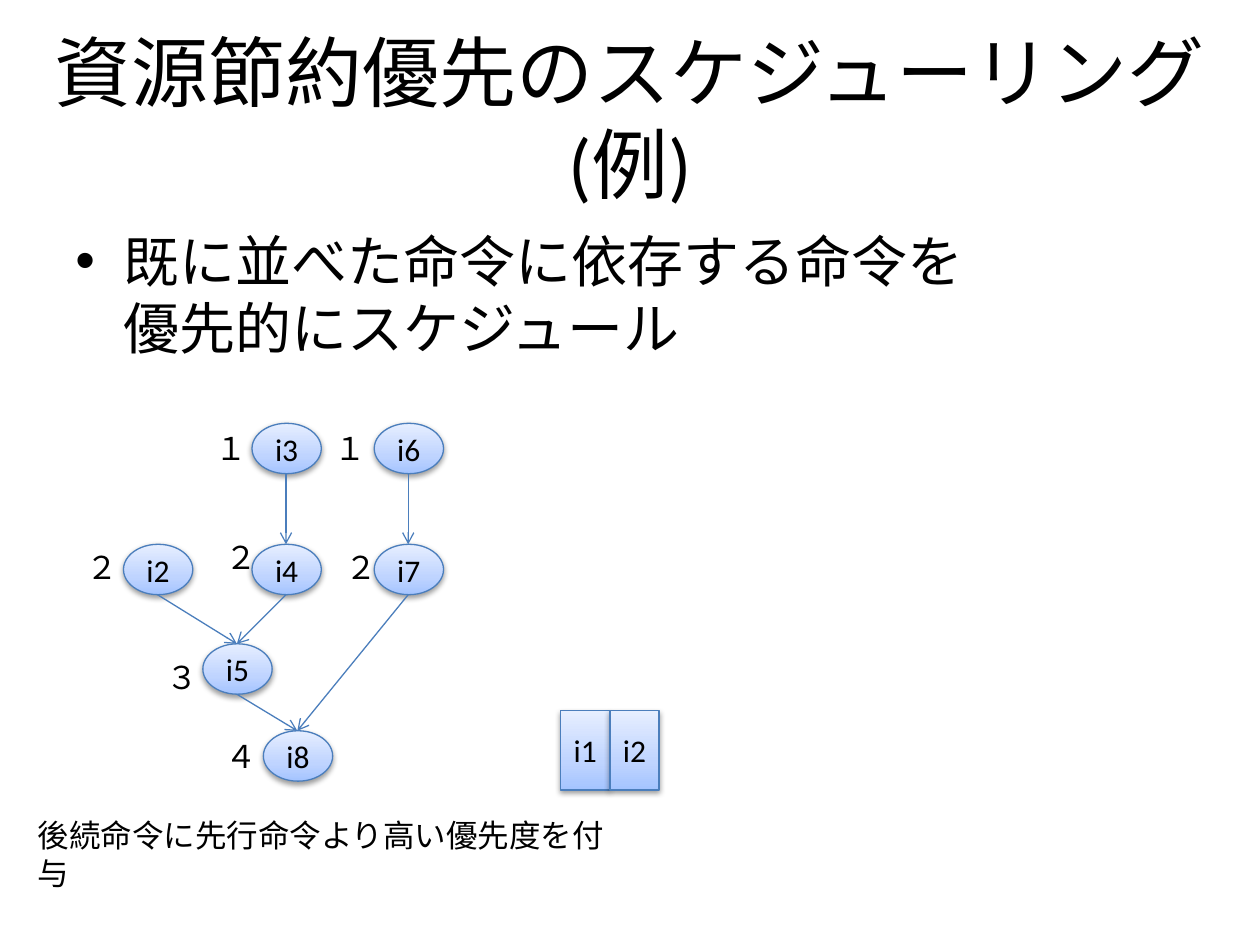
from copy import deepcopy

from lxml import etree
from pptx import Presentation
from pptx.dml.color import RGBColor
from pptx.enum.shapes import MSO_CONNECTOR, MSO_SHAPE
from pptx.enum.text import MSO_ANCHOR, PP_ALIGN
from pptx.oxml.ns import qn
from pptx.util import Pt

PX = 9144
BLACK = RGBColor(0x00, 0x00, 0x00)
EDGE_BLUE = RGBColor(0x4B, 0x7E, 0xBC)
GRADIENT = [
    (0, RGBColor(0xA4, 0xC4, 0xFF)),
    (0.35, RGBColor(0xBF, 0xD4, 0xFF)),
    (1, RGBColor(0xE6, 0xEE, 0xFF)),
]
ELLIPSE, RECTANGLE = MSO_SHAPE.OVAL, MSO_SHAPE.RECTANGLE
STRAIGHT = MSO_CONNECTOR.STRAIGHT
LEFT, CENTER = PP_ALIGN.LEFT, PP_ALIGN.CENTER
TOP, MIDDLE = MSO_ANCHOR.TOP, MSO_ANCHOR.MIDDLE

NODE_WIDTH, NODE_HEIGHT = 55, 40
NODES = {
    "i2": (98, 432), "i3": (200, 336), "i4": (200, 432), "i5": (161, 511),
    "i6": (297, 336), "i7": (297, 432), "i8": (209, 580),
}
EDGES = [("i2", "i5"), ("i3", "i4"), ("i4", "i5"),
         ("i5", "i8"), ("i6", "i7"), ("i7", "i8")]
PRIORITIES = [
    ("１", 161, 336), ("１", 256, 336), ("２", 59, 430), ("２", 169, 422),
    ("２", 264, 430), ("３", 122, 517), ("４", 169, 580),
]
SLOT_LEFT, SLOT_TOP, SLOT_WIDTH, SLOT_HEIGHT = 445, 564, 39, 63


class SlideBuilder:
    """Draws styled elements on the current slide, with lengths in px."""

    def __init__(self, page):
        self.page = page

    def fill_text(self, frame, text, size, font, align, anchor):
        frame.word_wrap = True
        frame.vertical_anchor = anchor
        para = frame.paragraphs[0]
        para.text = text
        para.alignment = align
        for span in para.runs:
            span.font.size = Pt(size)
            span.font.name = font
            span.font.color.rgb = BLACK
        return para

    def text(self, text, left, top, width, height, size=18, font="Arial",
             align=LEFT, anchor=TOP):
        box = self.page.shapes.add_textbox(
            left * PX, top * PX, width * PX, height * PX)
        return self.fill_text(box.text_frame, text, size, font, align, anchor)

    def bullet(self, text, left, top, width, height, size, indent):
        para = self.text(text, left, top, width, height, size, "Calibri")
        para.space_before = Pt(size * 0.2)
        properties = para._p.get_or_add_pPr()
        properties.set("marL", str(indent * PX))
        properties.set("indent", str(-indent * PX))
        etree.SubElement(properties, qn("a:buFont"), typeface="Arial")
        etree.SubElement(properties, qn("a:buChar"), char="•")

    def block(self, kind, text, left, top, width, height):
        shape = self.page.shapes.add_shape(
            kind, left * PX, top * PX, width * PX, height * PX)
        self.shade(shape)
        shape.line.color.rgb = EDGE_BLUE
        shape.line.width = Pt(0.75)
        frame = shape.text_frame
        frame.margin_left = frame.margin_right = 0
        self.fill_text(frame, text, 18, "Calibri", CENTER, MIDDLE)

    def shade(self, shape):
        shape.fill.gradient()
        shape.fill.gradient_angle = 90
        properties = shape._element.spPr
        stop_list = properties.find(qn("a:gradFill")).find(qn("a:gsLst"))
        stop_list.append(deepcopy(stop_list[0]))
        for stop, (position, color) in zip(shape.fill.gradient_stops, GRADIENT):
            stop.position = position
            stop.color.rgb = color
        shape.shadow.inherit = False
        shadow = etree.SubElement(
            properties.find(qn("a:effectLst")), qn("a:outerShdw"),
            blurRad="40000", dist="20000", dir="5400000", rotWithShape="0")
        tint = etree.SubElement(shadow, qn("a:srgbClr"), val=str(BLACK))
        etree.SubElement(tint, qn("a:alpha"), val="38000")

    def arrow(self, start, end):
        connector = self.page.shapes.add_connector(
            STRAIGHT, *(value * PX for value in (*start, *end)))
        connector.line.color.rgb = EDGE_BLUE
        connector.line.width = Pt(0.75)
        properties = connector._element.spPr
        etree.SubElement(properties.find(qn("a:ln")), qn("a:tailEnd"), type="arrow")
        etree.SubElement(properties, qn("a:effectLst"))


def main():
    deck = Presentation()
    deck.slide_width, deck.slide_height = 1000 * PX, 750 * PX
    builder = SlideBuilder(deck.slides.add_slide(deck.slide_layouts[6]))

    builder.text("資源節約優先のスケジューリング (例)", 0, 30, 1000, 125,
                 44, "Calibri", CENTER, MIDDLE)
    builder.bullet("既に並べた命令に依存する命令を\n優先的にスケジュール",
                   50, 175, 900, 495, 32, 38)

    for name, (left, top) in NODES.items():
        builder.block(ELLIPSE, name, left, top, NODE_WIDTH, NODE_HEIGHT)
    for source, target in EDGES:
        (source_left, source_top), (target_left, target_top) = NODES[source], NODES[target]
        builder.arrow((source_left + NODE_WIDTH // 2, source_top + NODE_HEIGHT),
                      (target_left + NODE_WIDTH // 2, target_top))

    for priority, left, top in PRIORITIES:
        builder.text(priority, left, top, 37, 40)
    builder.text("後続命令に先行命令より高い優先度を付与", 20, 643, 483, 40)

    for column, name in enumerate(["i1", "i2"]):
        builder.block(RECTANGLE, name, SLOT_LEFT + column * SLOT_WIDTH, SLOT_TOP,
                      SLOT_WIDTH, SLOT_HEIGHT)

    deck.save("out.pptx")


if __name__ == "__main__":
    main()
